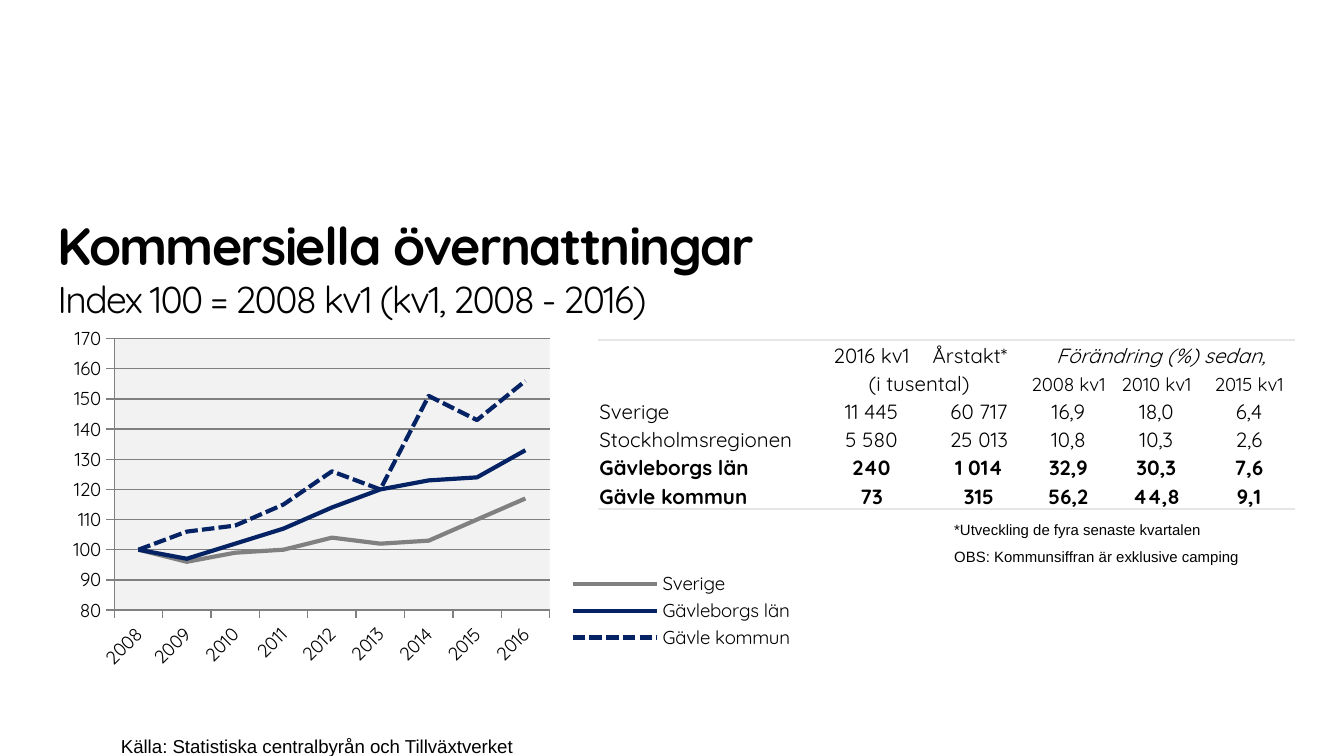
from lxml.etree import SubElement
from pptx import Presentation
from pptx.chart.data import CategoryChartData
from pptx.dml.color import RGBColor
from pptx.enum.chart import XL_CHART_TYPE, XL_LEGEND_POSITION, XL_TICK_MARK
from pptx.enum.dml import MSO_LINE
from pptx.enum.text import MSO_ANCHOR, PP_ALIGN
from pptx.oxml import parse_xml
from pptx.oxml.ns import nsdecls, qn
from pptx.util import Inches, Pt

SANS, ROUND = "Arial", "Quicksand"
BLACK, GRAY, NAVY, PALE, RULE = "000000", "808080", "052364", "F2F2F2", "E6E6E6"
PLAIN = "{2D5ABB26-0587-4C30-8999-92F81FD0307C}"
CHART = (0.43, 2.39, 5.55, 2.65)
YEARS = [str(year) for year in range(2008, 2017)]
SERIES = [
    ("Sverige", GRAY, None, (100, 96, 99, 100, 104, 102, 103, 110, 117)),
    ("Gävleborgs län", NAVY, None, (100, 97, 102, 107, 114, 120, 123, 124, 133)),
    ("Gävle kommun", NAVY, MSO_LINE.SQUARE_DOT, (100, 106, 108, 115, 126, 120, 151, 143, 156)),
]
WIDTHS = (1.59, 0.89, 0.71, 0.62, 0.69, 0.69)
ROWS = [
    ("", "2016 kv1", "Årstakt*", "Förändring (%) sedan,", "", ""),
    ("", "(i tusental)", "", "2008 kv1", "2010 kv1", "2015 kv1"),
    ("Sverige", "11 445", "60 717", "16,9", "18,0", "6,4"),
    ("Stockholmsregionen", "5 580", "25 013", "10,8", "10,3", "2,6"),
    ("Gävleborgs län", "240", "1 014", "32,9", "30,3", "7,6"),
    ("Gävle kommun", "73", "315", "56,2", "44,8", "9,1"),
]


def color(text):
    return RGBColor.from_string(text)


def assign(item, values):
    for name, value in values.items():
        setattr(item, name, value)


def style(font, face, size, **extra):
    assign(font, {"name": face, "size": Pt(size), **extra})
    font.color.rgb = color(BLACK)


def stroke(line, tint, width):
    line.color.rgb = color(tint)
    line.width = Pt(width)


def add_text(slide, box, lines, face, space=None, track=None):
    frame = slide.shapes.add_textbox(*map(Inches, box)).text_frame
    assign(frame, {"word_wrap": True, "margin_left": 0, "margin_right": 0,
                   "margin_top": 0, "margin_bottom": 0})
    for index, (text, size, bold) in enumerate(lines):
        para = frame.add_paragraph() if index else frame.paragraphs[0]
        para.line_spacing = space
        run = para.add_run()
        run.text = text
        style(run.font, face, size, bold=bold)
        if track:
            run.font._element.set("spc", str(track))


def add_rule(cell, side):
    cell._tc.get_or_add_tcPr().insert(0, parse_xml(
        f'<a:{side} {nsdecls("a")} w="12700"><a:solidFill>'
        f'<a:srgbClr val="{RULE}"/></a:solidFill></a:{side}>'))


def fill_cell(cell, text, row, col):
    assign(cell, {"margin_left": Inches(0.01), "margin_right": Inches(0.01),
                  "margin_top": Inches(0.01), "margin_bottom": 0,
                  "vertical_anchor": MSO_ANCHOR.BOTTOM})
    cell.fill.background()
    para = cell.text_frame.paragraphs[0]
    left = col == 0 or (row, col) == (0, 2)
    para.alignment = PP_ALIGN.LEFT if left else PP_ALIGN.CENTER
    if text:
        run = para.add_run()
        run.text = text
        size = 10 if row == 1 and col > 2 else 11
        style(run.font, ROUND, size, bold=row > 3, italic=(row, col) == (0, 3))
    else:
        SubElement(para._p, qn("a:endParaRPr"), sz="1000")
    if row == 0:
        add_rule(cell, "lnT")
    if row == len(ROWS) - 1:
        add_rule(cell, "lnB")


def add_grid(slide):
    box = map(Inches, (4.45, 2.53, sum(WIDTHS), 1.25))
    table = slide.shapes.add_table(len(ROWS), len(WIDTHS), *box).table
    assign(table, {"first_row": False, "horz_banding": False})
    table._tbl.tblPr.find(qn("a:tableStyleId")).text = PLAIN
    for column, width in zip(table.columns, WIDTHS):
        column.width = Inches(width)
    for index, texts in enumerate(ROWS):
        table.rows[index].height = Inches(0.21)
        for col, text in enumerate(texts):
            fill_cell(table.cell(index, col), text, index, col)
    table.cell(0, 3).merge(table.cell(0, 5))
    table.cell(1, 1).merge(table.cell(1, 2))


def place(item, index, box, inner=False):
    for old in item.findall(qn("c:layout")):
        item.remove(old)
    target = '<c:layoutTarget val="inner"/>' if inner else ""
    modes = "".join(f'<c:{key}Mode val="edge"/>' for key in "xy")
    sizes = "".join(f'<c:{key} val="{value / whole}"/>'
                    for key, value, whole in zip("xywh", box, CHART[2:] * 2))
    item.insert(index, parse_xml(
        f'<c:layout {nsdecls("c")}><c:manualLayout>{target}{modes}{sizes}'
        '</c:manualLayout></c:layout>'))


def add_lines(slide):
    data = CategoryChartData(number_format="0")
    data.categories = YEARS
    for name, tint, dash, values in SERIES:
        data.add_series(name, values)
    box = map(Inches, CHART)
    chart = slide.shapes.add_chart(XL_CHART_TYPE.LINE, *box, data).chart
    assign(chart, {"has_title": False, "has_legend": True})
    style(chart.font, ROUND, 10)
    chart.plots[0].vary_by_categories = False
    for series, (name, tint, dash, values) in zip(chart.plots[0].series, SERIES):
        series.smooth = False
        stroke(series.format.line, tint, 2.25)
        if dash:
            series.format.line.dash_style = dash
    for axis in (chart.category_axis, chart.value_axis):
        axis.major_tick_mark = XL_TICK_MARK.OUTSIDE
        stroke(axis.format.line, GRAY, 0.75)
        style(axis.tick_labels.font, ROUND, 10)
    assign(chart.value_axis, {"minimum_scale": 80, "maximum_scale": 170,
                              "major_unit": 10, "has_major_gridlines": True})
    assign(chart.value_axis.tick_labels, {"number_format": "0", "number_format_is_linked": False})
    stroke(chart.value_axis.major_gridlines.format.line, GRAY, 0.75)
    turn = chart.category_axis._element.find(qn("c:txPr")).find(qn("a:bodyPr"))
    turn.set("rot", "-2700000")
    assign(chart.legend, {"position": XL_LEGEND_POSITION.RIGHT, "include_in_layout": False})
    style(chart.legend.font, ROUND, 10)
    place(chart.legend._element, 1, (3.78, 1.84, 1.72, 0.63))
    area = chart._chartSpace.chart.plotArea
    place(area, 0, (0.42, 0.13, 3.24, 2.02), True)
    area.append(parse_xml(
        f'<c:spPr {nsdecls("c", "a")}><a:solidFill><a:srgbClr val="{PALE}"/>'
        '</a:solidFill><a:ln><a:noFill/></a:ln></c:spPr>'))


def main():
    deck = Presentation()
    wide = Inches(10)
    assign(deck, {"slide_width": wide, "slide_height": wide * 9 // 16})
    slide = deck.slides.add_slide(deck.slide_layouts[6])
    add_text(slide, (0.43, 1.59, 8.14, 0.8),
             [("Kommersiella övernattningar", 28, True),
              ("Index 100 = 2008 kv1 (kv1, 2008 - 2016)", 20, False)],
             ROUND, track=-90)
    add_text(slide, (0.9, 5.3, 3.1, 0.32),
             [("Källa: Statistiska centralbyrån och Tillväxtverket", 10, False)],
             SANS, space=Pt(24))
    add_grid(slide)
    add_text(slide, (7.1, 3.81, 2.3, 0.5),
             [("*Utveckling de fyra senaste kvartalen", 8, False),
              ("OBS: Kommunsiffran är exklusive camping", 8, False)],
             SANS, space=1.5)
    add_lines(slide)
    deck.save("out.pptx")


if __name__ == "__main__":
    main()
